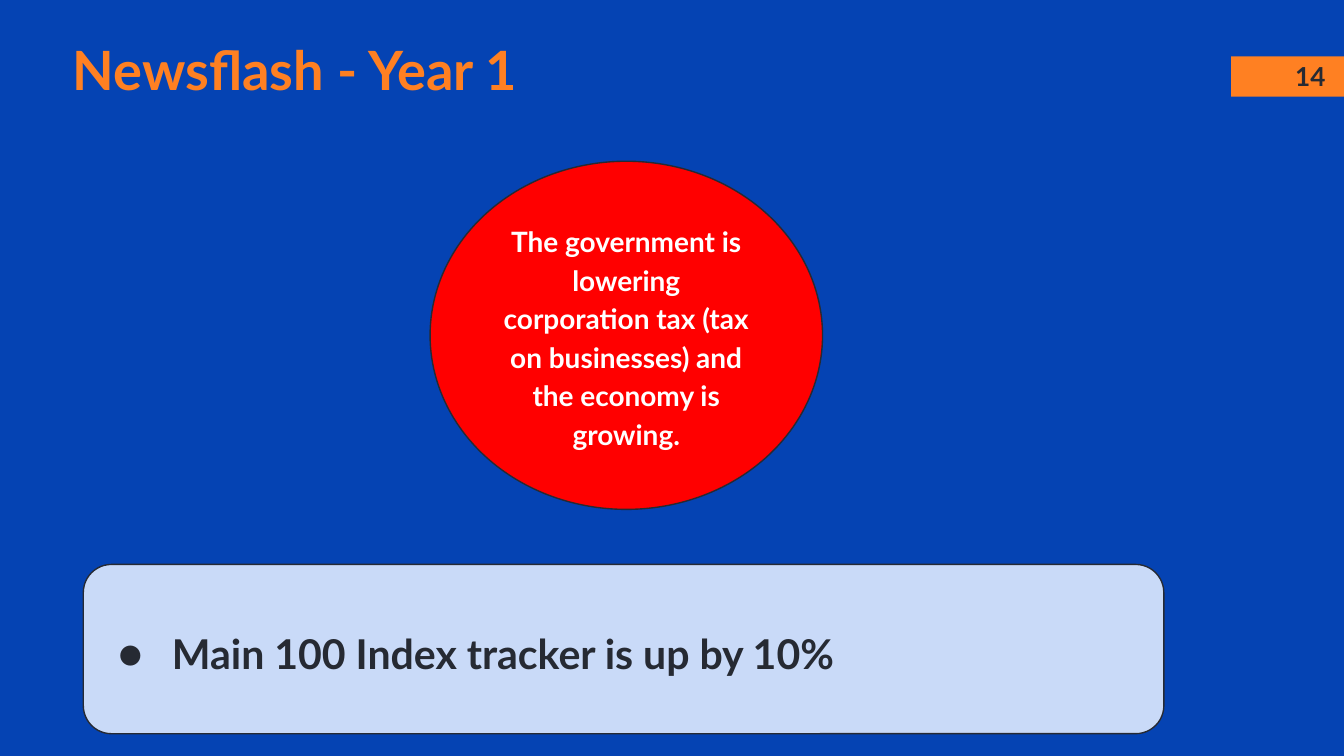
"""Build the Newsflash slide for year 1."""
from dataclasses import dataclass
from typing import Optional

from lxml import etree
from pptx import Presentation
from pptx.dml.color import RGBColor
from pptx.enum.shapes import MSO_SHAPE
from pptx.enum.text import MSO_ANCHOR, MSO_AUTO_SIZE, PP_ALIGN
from pptx.oxml.ns import qn
from pptx.util import Inches, Pt

RECT, OVAL, ROUND = MSO_SHAPE.RECTANGLE, MSO_SHAPE.OVAL, MSO_SHAPE.ROUNDED_RECTANGLE
LEFT, CENTER = PP_ALIGN.LEFT, PP_ALIGN.CENTER
TOP, MIDDLE = MSO_ANCHOR.TOP, MSO_ANCHOR.MIDDLE
NO_FIT = MSO_AUTO_SIZE.NONE

FONT = "Lato"
BLUE, ORANGE, RED = "0543B3", "FF8022", "FF0000"
PALE, DARK, WHITE = "C9DAF8", "262A33", "FFFFFF"


@dataclass
class Label:
    text: str
    size: float
    color: str
    align: PP_ALIGN = CENTER
    anchor: MSO_ANCHOR = MIDDLE
    inset: float = 0.1
    spacing: float = 1.0
    bullet: bool = False


@dataclass
class Panel:
    kind: MSO_SHAPE
    box: tuple[float, float, float, float]
    fill: str
    line: Optional[str] = None
    label: Optional[Label] = None


PANELS = [
    Panel(RECT, (9.16, 0.42, 0.84, 0.3), ORANGE),
    Panel(OVAL, (3.2, 1.2, 2.92, 2.59), RED, DARK, Label(
        "The government is lowering corporation tax (tax on businesses) "
        "and the economy is growing.", 15, WHITE, spacing=1.15)),
    Panel(ROUND, (0.62, 4.2, 8.04, 1.26), PALE, DARK, Label(
        "Main 100 Index tracker is up by 10%", 22, DARK, LEFT,
        spacing=1.15, bullet=True)),
]


def rgb(color: str) -> RGBColor:
    """Turn a hex string into a colour."""
    return RGBColor.from_string(color)


def add_bullet(p, color: str) -> None:
    """Give a paragraph a hanging round bullet."""
    pPr = p._p.get_or_add_pPr()
    pPr.set("marL", str(Inches(0.5)))
    pPr.set("indent", str(Inches(-0.4)))
    clr = etree.SubElement(pPr, qn("a:buClr"))
    etree.SubElement(clr, qn("a:srgbClr"), val=color)
    etree.SubElement(pPr, qn("a:buFont"), typeface=FONT)
    etree.SubElement(pPr, qn("a:buChar"), char="●")


def write(sp, label: Label) -> None:
    """Write a label into a shape."""
    tf = sp.text_frame
    tf.word_wrap = True
    tf.auto_size = NO_FIT
    tf.vertical_anchor = label.anchor
    tf.margin_left = tf.margin_right = Inches(label.inset)
    tf.margin_top = tf.margin_bottom = Inches(label.inset)
    p = tf.paragraphs[0]
    p.alignment = label.align
    p.line_spacing = label.spacing
    if label.bullet:
        add_bullet(p, label.color)
    r = p.add_run()
    r.text = label.text
    r.font.name = FONT
    r.font.size = Pt(label.size)
    r.font.bold = True
    r.font.color.rgb = rgb(label.color)


def add_panel(s, panel: Panel) -> None:
    """Draw a filled shape with its label."""
    sp = s.shapes.add_shape(panel.kind, *map(Inches, panel.box))
    sp.shadow.inherit = False
    sp.fill.solid()
    sp.fill.fore_color.rgb = rgb(panel.fill)
    if panel.line:
        sp.line.color.rgb = rgb(panel.line)
        sp.line.width = Pt(0.75)
    else:
        sp.line.fill.background()
    if panel.label:
        write(sp, panel.label)


def main() -> None:
    """Build and save the slide."""
    prs = Presentation()
    prs.slide_width, prs.slide_height = Inches(10), Inches(10 * 9 / 16)
    s = prs.slides.add_slide(prs.slide_layouts[5])
    s.background.fill.solid()
    s.background.fill.fore_color.rgb = rgb(BLUE)

    title = s.shapes.title
    title.left, title.top = Inches(0.54), Inches(0.27)
    title.width, title.height = Inches(8.13), Inches(0.85)
    write(title, Label("Newsflash - Year 1", 29, ORANGE, LEFT, TOP, inset=0))

    for panel in PANELS:
        add_panel(s, panel)

    number = s.shapes.add_textbox(*map(Inches, (9.49, 0.44, 0.52, 0.25)))
    write(number, Label("14", 14, DARK))
    prs.save("out.pptx")


if __name__ == "__main__":
    main()
